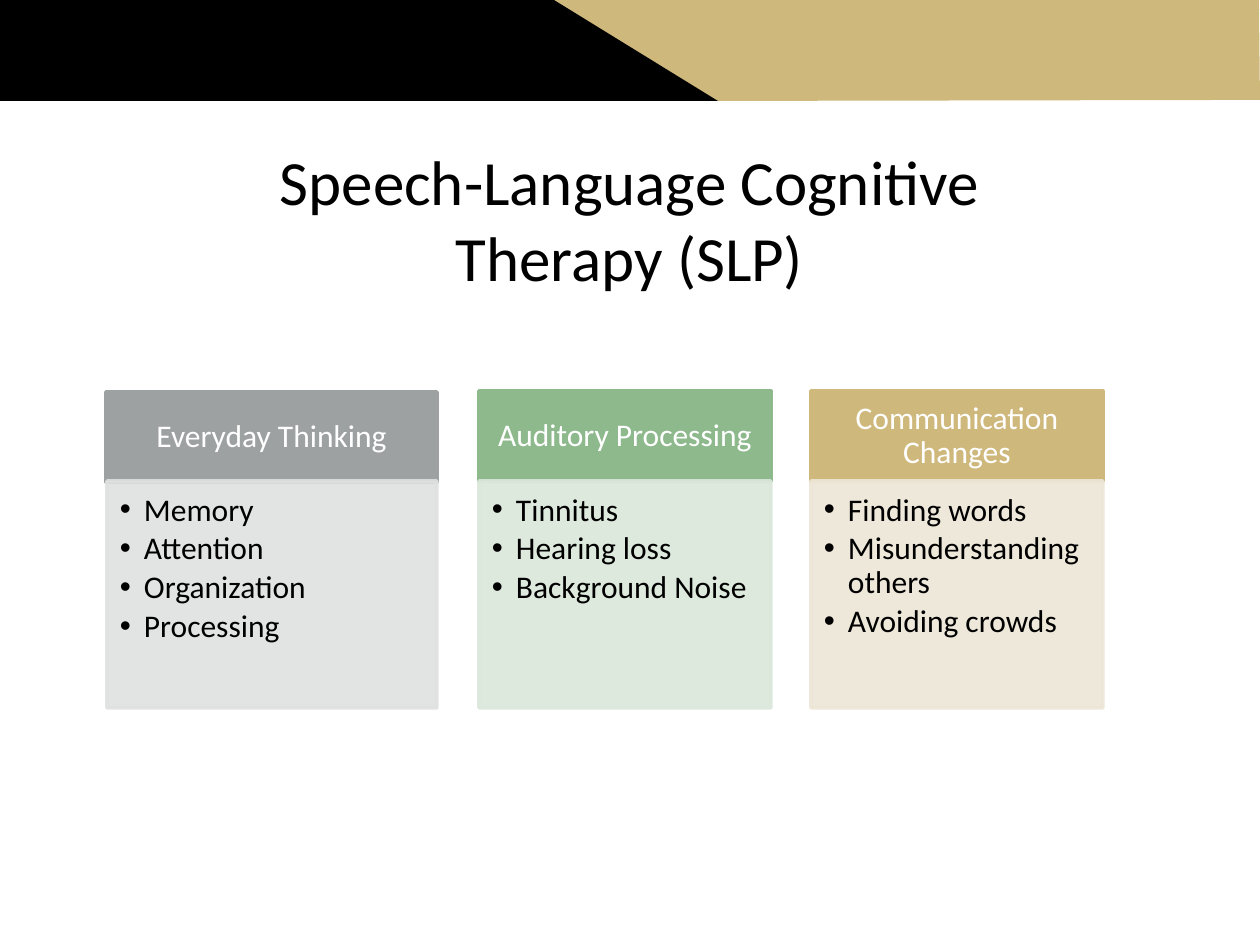
from dataclasses import dataclass

from lxml import etree
from pptx import Presentation, util as u
from pptx.dml.color import RGBColor
from pptx.enum import shapes, text
from pptx.oxml import ns

SCALE = 914400 / 126
FONT = "Calibri"
BLACK = RGBColor(0x00, 0x00, 0x00)
WHITE = RGBColor(0xFF, 0xFF, 0xFF)
GOLD = RGBColor(0xCF, 0xB8, 0x7C)
GRAY = RGBColor(0x9E, 0xA1, 0xA2)
GREEN = RGBColor(0x8D, 0xB9, 0x8C)
MIST = RGBColor(0xDF, 0xE0, 0xE0)
MINT = RGBColor(0xDB, 0xE7, 0xDB)
SAND = RGBColor(0xED, 0xE6, 0xD7)


@dataclass
class Box:
    left: int
    top: int
    width: int
    height: int


@dataclass
class Card:
    title: str
    items: list[str]
    head: Box
    body: Box
    dark: RGBColor
    pale: RGBColor


CARDS = [
    Card("Everyday Thinking",
         ["Memory", "Attention", "Organization", "Processing"],
         Box(106, 392, 331, 90), Box(107, 481, 330, 227), GRAY, MIST),
    Card("Auditory Processing",
         ["Tinnitus", "Hearing loss", "Background Noise"],
         Box(479, 391, 292, 90), Box(479, 481, 292, 227), GREEN, MINT),
    Card("Communication Changes",
         ["Finding words", "Misunderstanding others", "Avoiding crowds"],
         Box(811, 391, 292, 90), Box(811, 481, 292, 227), GOLD, SAND),
]


def px(size: int) -> u.Emu:
    return u.Emu(round(size * SCALE))


def place(box: Box) -> list[u.Emu]:
    return [px(n) for n in (box.left, box.top, box.width, box.height)]


def add(parent, tag: str, **attrs: str) -> None:
    node = etree.SubElement(parent, ns.qn(tag))
    for name, value in attrs.items():
        node.set(name, value)


def draw_band(slide, points: list[tuple[int, int]], color: RGBColor) -> None:
    pen = slide.shapes.build_freeform(*points[0], scale=SCALE)
    pen.add_line_segments(points[1:], close=True)
    band = pen.convert_to_shape()
    band.shadow.inherit = False
    band.fill.solid()
    band.fill.fore_color.rgb = color
    band.line.fill.background()


def draw_rect(slide, box: Box, color: RGBColor, insets: tuple[int, ...]):
    """Draw a filled rectangle; insets run left, top, right, bottom."""
    rect = slide.shapes.add_shape(shapes.MSO_SHAPE.RECTANGLE, *place(box))
    rect.shadow.inherit = False
    for paint in (rect.fill, rect.line.fill):
        paint.solid()
        paint.fore_color.rgb = color
    rect.line.width = u.Pt(2)
    frame = rect.text_frame
    frame.word_wrap = True
    (frame.margin_left, frame.margin_top,
     frame.margin_right, frame.margin_bottom) = map(px, insets)
    return rect


def style(para, size: int, color: RGBColor) -> None:
    para.font.name = FONT
    para.font.size = u.Pt(size)
    para.font.color.rgb = color


def draw_head(slide, card: Card) -> None:
    frame = draw_rect(slide, card.head, card.dark, (18, 10, 18, 10)).text_frame
    frame.vertical_anchor = text.MSO_ANCHOR.MIDDLE
    para = frame.paragraphs[0]
    para.text = card.title
    para.alignment = text.PP_ALIGN.CENTER
    para.line_spacing = 0.9
    style(para, 18, WHITE)


def draw_body(slide, card: Card) -> None:
    rect = draw_rect(slide, card.body, card.pale, (13, 13, 18, 20))
    for color in rect._element.spPr.iter(ns.qn("a:srgbClr")):
        add(color, "a:alpha", val="90000")
    frame = rect.text_frame
    frame.vertical_anchor = text.MSO_ANCHOR.TOP
    for i, item in enumerate(card.items):
        para = frame.add_paragraph() if i else frame.paragraphs[0]
        para.text = item
        para.level = 1
        para.alignment = text.PP_ALIGN.LEFT
        para.line_spacing = 0.9
        para.space_after = u.Pt(2.7)
        props = para._p.get_or_add_pPr()
        props.set("marL", str(px(24)))
        props.set("indent", str(-px(24)))
        add(props, "a:buFont", typeface="Arial")
        add(props, "a:buChar", char="•")
        style(para, 18, BLACK)


def draw_title(slide, title: str, box: Box) -> None:
    frame = slide.shapes.add_textbox(*place(box)).text_frame
    frame.word_wrap = True
    frame.vertical_anchor = text.MSO_ANCHOR.MIDDLE
    para = frame.paragraphs[0]
    para.text = title
    para.alignment = text.PP_ALIGN.CENTER
    style(para, 36, BLACK)


def main() -> None:
    deck = Presentation()
    deck.slide_width, deck.slide_height = px(1260), px(945)
    slide = deck.slides.add_slide(deck.slide_layouts[6])
    draw_band(slide, [(542, 0), (1259, 0), (1260, 100), (713, 101)], GOLD)
    draw_band(slide, [(0, 0), (554, 0), (718, 101), (0, 101)], BLACK)
    for card in CARDS:
        draw_head(slide, card)
        draw_body(slide, card)
    draw_title(slide, "Speech-Language Cognitive Therapy (SLP)",
               Box(204, 184, 851, 69))
    deck.save("out.pptx")


if __name__ == "__main__":
    main()
